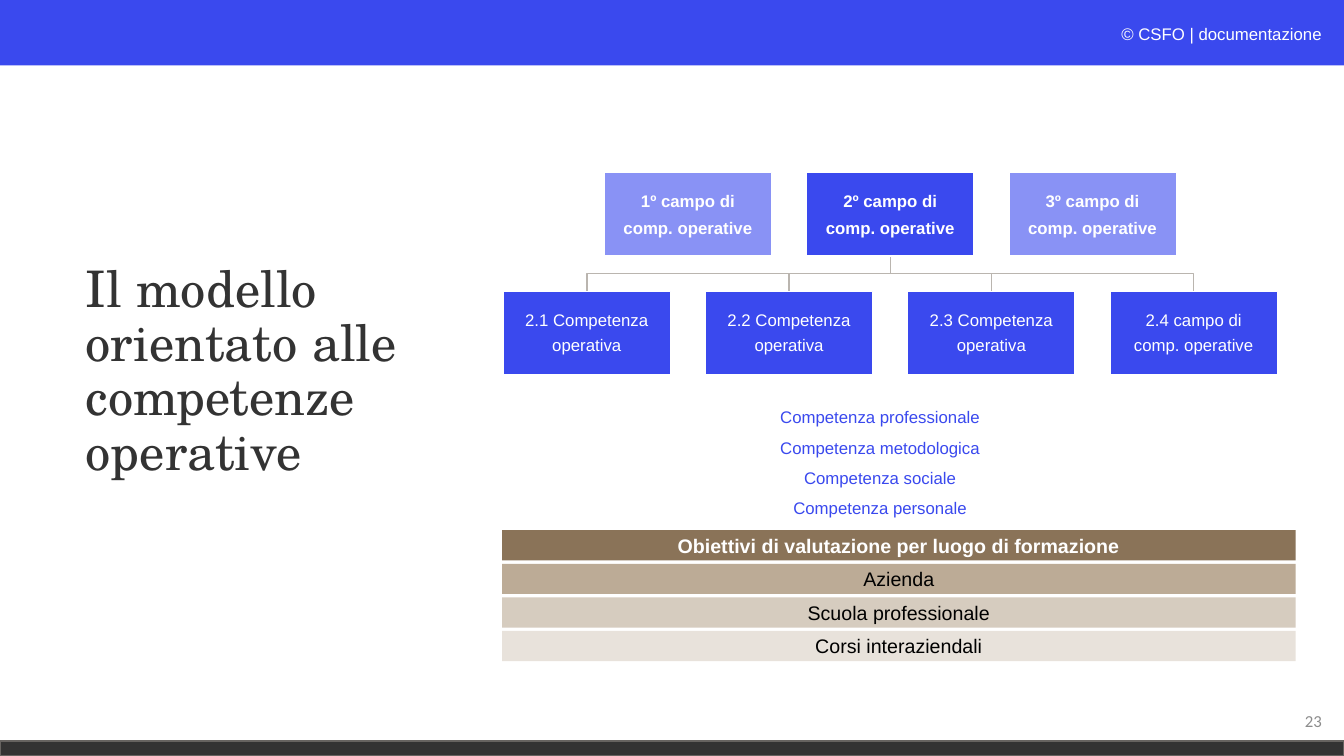
import dataclasses

import pptx
import pptx.dml.color
import pptx.enum.shapes
import pptx.enum.text
import pptx.util

Inches = pptx.util.Inches
Pt = pptx.util.Pt
Align = pptx.enum.text.PP_ALIGN
Anchor = pptx.enum.text.MSO_ANCHOR


@dataclasses.dataclass(frozen=True)
class Theme:
    blue: str = "3A49EE"
    pale_blue: str = "8992F5"
    white: str = "FFFFFF"
    off_white: str = "FCFDFE"
    black: str = "000000"
    dark: str = "333333"
    footer_edge: str = "666360"
    gray: str = "8C8C8C"
    connector: str = "BAB5AF"
    browns: tuple = ("8A7358", "BCAB96", "D6CCBF", "E8E2DB")
    body_font: str = "Arial"
    number_font: str = "Calibri"
    title_font: str = "TeX Gyre Schola"
    title_size: int = 36
    bar_size: int = 14
    small_size: int = 12


class SlideBuilder:
    def __init__(self, deck, theme):
        self.theme = theme
        self.slide = deck.slides.add_slide(deck.slide_layouts[5])

    def color(self, code):
        return pptx.dml.color.RGBColor.from_string(code)

    def place(self, shape, left, top, width, height):
        shape.left, shape.top = Inches(left), Inches(top)
        shape.width, shape.height = Inches(width), Inches(height)

    def add_span(self, para, text, color, size=None, font=None, bold=False, italic=False):
        span = para.add_run()
        span.text = text
        span.font.name = font or self.theme.body_font
        span.font.size = Pt(size or self.theme.small_size)
        span.font.bold = bold
        span.font.italic = italic
        span.font.color.rgb = self.color(color)

    def fill_text(self, shape, lines, color, align=Align.CENTER, anchor=Anchor.MIDDLE,
                  spacing=None, after=0, margin=None, wrap=True, **style):
        frame = shape.text_frame
        frame.word_wrap = wrap
        frame.auto_size = pptx.enum.text.MSO_AUTO_SIZE.NONE
        frame.vertical_anchor = anchor
        if margin is not None:
            frame.margin_left = frame.margin_right = Inches(margin)
            frame.margin_top = frame.margin_bottom = Inches(margin)
        for index, line in enumerate(lines):
            para = frame.paragraphs[0] if index == 0 else frame.add_paragraph()
            para.alignment = align
            para.line_spacing = spacing
            para.space_after = Pt(after)
            self.add_span(para, line, color, **style)

    def title(self, text, left, top, width, height):
        box = self.slide.shapes.title
        self.place(box, left, top, width, height)
        self.fill_text(box, [text], self.theme.dark, align=Align.LEFT, spacing=0.9,
                       size=self.theme.title_size, font=self.theme.title_font)

    def box(self, left, top, width, height, fill, edge=None):
        shape = self.slide.shapes.add_shape(
            pptx.enum.shapes.MSO_SHAPE.RECTANGLE,
            Inches(left), Inches(top), Inches(width), Inches(height))
        shape.shadow.inherit = False
        shape.fill.solid()
        shape.fill.fore_color.rgb = self.color(fill)
        if edge:
            shape.line.color.rgb = self.color(edge)
            shape.line.width = Pt(1)
        else:
            shape.line.fill.background()
        return shape

    def label(self, lines, left, top, width, height, color, **style):
        box = self.slide.shapes.add_textbox(
            Inches(left), Inches(top), Inches(width), Inches(height))
        self.fill_text(box, lines, color, **style)
        return box

    def branch(self, start_x, start_y, end_x, end_y):
        middle = (start_y + end_y) / 2
        points = [(start_x, start_y), (start_x, middle), (end_x, middle), (end_x, end_y)]
        corners = [(Inches(x), Inches(y)) for x, y in points]
        builder = self.slide.shapes.build_freeform(*corners[0])
        builder.add_line_segments(corners[1:], close=False)
        shape = builder.convert_to_shape()
        shape.shadow.inherit = False
        shape.fill.background()
        shape.line.color.rgb = self.color(self.theme.connector)
        shape.line.width = Pt(1)


def add_frame(page, theme):
    page.box(0, 0, 13.33, 0.65, theme.blue)
    page.box(0, 7.35, 13.33, 0.15, theme.dark, theme.footer_edge)
    notice = page.label(["© "], 8.62, 0.19, 4.59, 0.3, theme.off_white,
                        align=Align.RIGHT, anchor=Anchor.TOP, italic=True)
    page.add_span(notice.text_frame.paragraphs[0], "CSFO | documentazione", theme.white)
    page.label(["23"], 10.21, 6.95, 3, 0.4, theme.gray,
               font=theme.number_font, align=Align.RIGHT)


def add_competence_tree(page, theme):
    left, width, height = 4.99, 1.66, 0.83
    field_top, competence_top = 1.71, 2.89
    pitch = (11.01 - left) / 3
    root_x = left + 1.5 * pitch + width / 2
    competences = [
        ["2.1 Competenza", "operativa"],
        ["2.2 Competenza", "operativa"],
        ["2.3 Competenza", "operativa"],
        ["2.4 campo di", "comp. operative"],
    ]
    for index in range(len(competences)):
        page.branch(root_x, field_top + height,
                    left + index * pitch + width / 2, competence_top)
    for index, fill in enumerate([theme.pale_blue, theme.blue, theme.pale_blue]):
        field = page.box(left + (index + 0.5) * pitch, field_top, width, height,
                         fill, theme.white)
        page.fill_text(field, [f"{index + 1}º campo di", "comp. operative"],
                       theme.white, bold=True, after=4.8, margin=0.01)
    for index, lines in enumerate(competences):
        competence = page.box(left + index * pitch, competence_top, width, height,
                              theme.blue, theme.white)
        page.fill_text(competence, lines, theme.white, spacing=0.9, after=4.8, margin=0.01)


def add_objectives(page, theme):
    page.label(["Competenza professionale", "Competenza metodologica",
                "Competenza sociale", "Competenza personale"],
               7.61, 3.89, 2.24, 1.28, theme.blue,
               anchor=Anchor.TOP, spacing=1.5, wrap=False)
    rows = ["Obiettivi di valutazione per luogo di formazione", "Azienda",
            "Scuola professionale", "Corsi interaziendali"]
    for index, (text, fill) in enumerate(zip(rows, theme.browns)):
        heading = index == 0
        bar = page.box(4.98, 5.26 + index / 3, 7.87, 0.3, fill)
        page.fill_text(bar, [text], theme.white if heading else theme.black,
                       size=theme.bar_size, bold=heading)


def main():
    deck = pptx.Presentation()
    deck.slide_width, deck.slide_height = Inches(13.33), Inches(7.5)
    theme = Theme()
    page = SlideBuilder(deck, theme)
    add_frame(page, theme)
    page.title("Il modello orientato alle competenze operative", 0.75, 2.54, 3.67, 2.31)
    add_competence_tree(page, theme)
    add_objectives(page, theme)
    deck.save("out.pptx")


if __name__ == "__main__":
    main()
